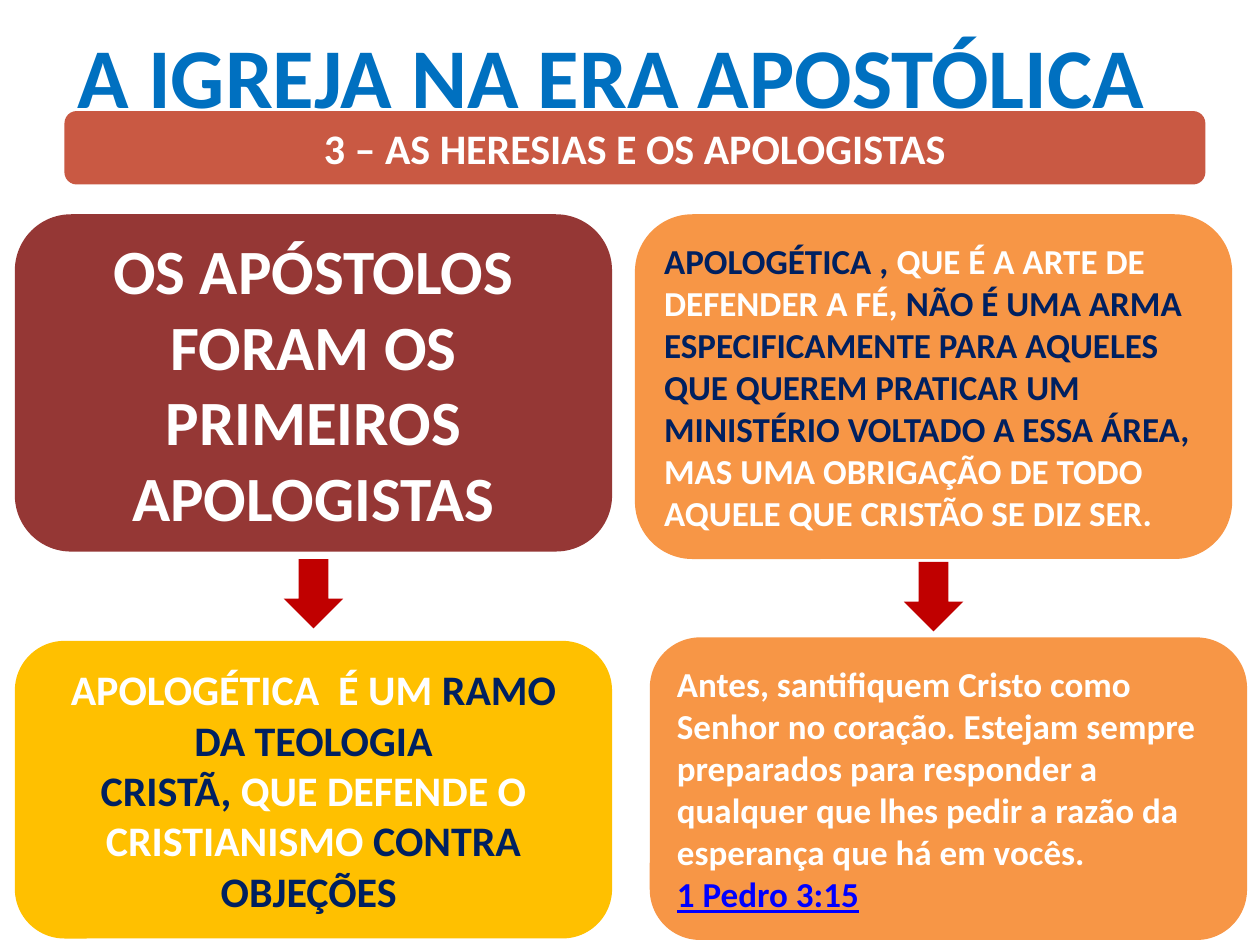
import pptx
import pptx.util
import pptx.dml.color
import pptx.enum.shapes
import pptx.enum.text

Cm = pptx.util.Cm
SHAPE = pptx.enum.shapes.MSO_SHAPE
ALIGN = pptx.enum.text.PP_ALIGN
ANCHOR = pptx.enum.text.MSO_ANCHOR

WHITE, NAVY, ORANGE = "FFFFFF", "002060", "F79646"
LEFT, WIDE = 0.3, 12.04


def tint(code):
    return pptx.dml.color.RGBColor.from_string(code)


def write(frame, paras, size=24, align=ALIGN.CENTER, anchor=ANCHOR.MIDDLE):
    """Fill a frame; each paragraph is a list of (text, colour) runs.

    A newline that opens a run's text is set as a line break."""
    frame.word_wrap = True
    frame.vertical_anchor = anchor
    for i, runs in enumerate(paras):
        para = frame.add_paragraph() if i else frame.paragraphs[0]
        para.alignment = align
        for text, color in runs:
            if text.startswith("\n"):
                para.add_line_break()
            run = para.add_run()
            run.text = text.lstrip("\n")
            font = run.font
            font.name, font.size, font.bold = "Calibri", pptx.util.Pt(size), True
            font.color.rgb = tint(color)


def shape(slide, kind, box, fill):
    item = slide.shapes.add_shape(kind, *map(Cm, box))
    item.shadow.inherit = False
    item.fill.solid()
    item.fill.fore_color.rgb = tint(fill)
    item.line.fill.background()
    return item


def card(slide, box, fill, paras, **style):
    item = shape(slide, SHAPE.ROUNDED_RECTANGLE, box, fill)
    write(item.text_frame, paras, **style)
    return item.text_frame


def arrow(slide, x, y):
    shape(slide, SHAPE.DOWN_ARROW, (x, y, 1.2, 1.4), "C00000")


def title(slide, text):
    box = slide.shapes.add_textbox(Cm(0.89), Cm(0.35), Cm(22.86), Cm(1.93))
    write(box.text_frame, [[(text, "0070C0")]], size=48.6, anchor=ANCHOR.TOP)


def main():
    deck = pptx.Presentation()
    deck.slide_width, deck.slide_height = Cm(25.4), Cm(19.05)
    slide = deck.slides.add_slide(deck.slide_layouts[6])

    title(slide, "A IGREJA NA ERA APOSTÓLICA")
    card(slide, (1.3, 2.24, 23, 1.48), "C95943",
         [[("3 – AS HERESIAS E OS APOLOGISTAS", WHITE)]])

    card(slide, (LEFT, 4.32, WIDE, 6.8), "953735",
         [[("OS APÓSTOLOS FORAM OS PRIMEIROS APOLOGISTAS", WHITE)]], size=36)
    arrow(slide, 5.72, 11.27)
    card(slide, (LEFT, 12.92, WIDE, 6), "FFC000", [
        [("APOLOGÉTICA  É UM ", WHITE), ("RAMO DA TEOLOGIA", NAVY)],
        [("CRISTÃ, ", NAVY), ("QUE DEFENDE O CRISTIANISMO ", WHITE),
         ("CONTRA OBJEÇÕES ", NAVY)],
    ])

    card(slide, (12.8, 4.32, WIDE, 6.95), ORANGE, [[
        ("APOLOGÉTICA , ", NAVY),
        ("QUE É A ARTE DE DEFENDER A FÉ, ", WHITE),
        ("NÃO É UMA ARMA ESPECIFICAMENTE PARA AQUELES QUE QUEREM "
         "PRATICAR UM MINISTÉRIO VOLTADO A ESSA ÁREA, ", NAVY),
        ("MAS UMA OBRIGAÇÃO DE TODO AQUELE QUE CRISTÃO SE DIZ SER.", WHITE),
    ]], size=20, align=ALIGN.LEFT)
    arrow(slide, 18.22, 11.33)
    verse = card(slide, (13.1, 12.85, WIDE, 6.1), ORANGE, [[
        ("Antes, santifiquem Cristo como Senhor no coração. Estejam sempre "
         "preparados para responder a qualquer que lhes pedir a razão da "
         "esperança que há em vocês.", WHITE),
        ("\n1 Pedro 3:15", "0000FF"),
    ]], size=20, align=ALIGN.LEFT)
    verse.paragraphs[0].runs[-1].font.underline = True

    deck.save("out.pptx")


if __name__ == "__main__":
    main()
